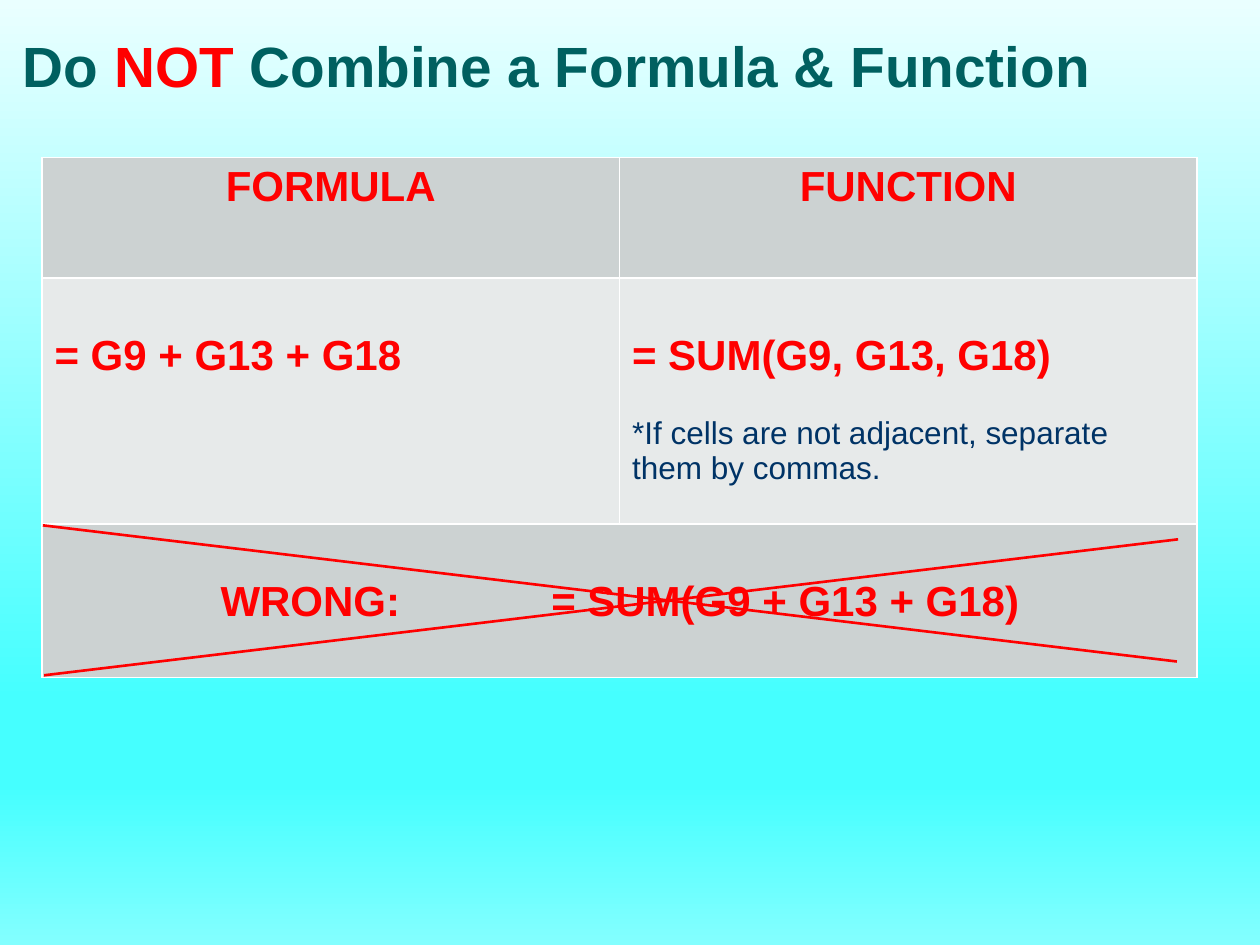
from dataclasses import dataclass

import pptx
import pptx.dml.color
import pptx.enum.shapes
import pptx.enum.text
import pptx.oxml
import pptx.oxml.ns
import pptx.util

COLORS = {
    "title": "006060",
    "accent": "FF0000",
    "note": "003366",
    "band": "CCD2D2",
    "body": "E7EAEA",
    "border": "FFFFFF",
}
BACKGROUND_STOPS = {0: "EAFFFF", 74: "45FFFF", 83: "45FFFF", 100: "83FFFF"}
FONT = "Arial"
NAMESPACE = pptx.oxml.ns.nsdecls("a")
LEFT = pptx.enum.text.PP_ALIGN.LEFT
CENTER = pptx.enum.text.PP_ALIGN.CENTER
TOP_MARGIN = 3.6
LOWERED_MARGIN = 31.2
SIDE_MARGIN = 7.2


@dataclass(frozen=True)
class Line:
    text: str
    size: float = 24
    color: str = "accent"
    bold: bool = True
    space_before: float = 0
    tab: float = 0


@dataclass(frozen=True)
class Entry:
    row: int
    column: int
    fill: str
    lines: tuple[Line, ...]
    align: pptx.enum.text.PP_ALIGN = LEFT
    top: float = LOWERED_MARGIN
    left: float = SIDE_MARGIN


@dataclass(frozen=True)
class Stroke:
    x1: float
    y1: float
    x2: float
    y2: float


ENTRIES = (
    Entry(0, 0, "band", (Line("FORMULA"),), CENTER, TOP_MARGIN),
    Entry(0, 1, "band", (Line("FUNCTION"),), CENTER, TOP_MARGIN),
    Entry(1, 0, "body", (Line("= G9 + G13 + G18"),)),
    Entry(1, 1, "body", (
        Line("= SUM(G9, G13, G18)"),
        Line("*If cells are not adjacent, separate them by commas.",
             18, "note", False, 20.7),
    )),
    Entry(2, 0, "band", (Line("WRONG:\t= SUM(G9 + G13 + G18)", tab=189),), left=102),
)
CROSS = (Stroke(24.5, 300.2, 672.5, 378), Stroke(25.2, 385.9, 673.2, 308.2))


def rgb(name: str) -> pptx.dml.color.RGBColor:
    return pptx.dml.color.RGBColor.from_string(COLORS[name])


def format_font(font, size: float, color: str, bold: bool) -> None:
    font.name = FONT
    font.size = pptx.util.Pt(size)
    font.bold = bold
    font.color.rgb = rgb(color)


def paint_background(slide) -> None:
    stops = "".join(
        f'<a:gs pos="{position * 1000}"><a:srgbClr val="{color}"/></a:gs>'
        for position, color in BACKGROUND_STOPS.items()
    )
    fill = slide.background.fill
    fill.gradient()
    gradient = slide._element.find(".//" + pptx.oxml.ns.qn("a:gradFill"))
    gradient.getparent().replace(gradient, pptx.oxml.parse_xml(
        f'<a:gradFill {NAMESPACE} rotWithShape="1"><a:gsLst>{stops}</a:gsLst>'
        '<a:lin ang="5400000" scaled="0"/></a:gradFill>'
    ))


def write_title(slide) -> None:
    title = slide.shapes.title
    title.left, title.top = pptx.util.Pt(5.8), pptx.util.Pt(2.9)
    title.width, title.height = pptx.util.Pt(696.2), pptx.util.Pt(57.6)
    frame = title.text_frame
    frame.auto_size = pptx.enum.text.MSO_AUTO_SIZE.NONE
    frame.vertical_anchor = pptx.enum.text.MSO_ANCHOR.BOTTOM
    heading = frame.paragraphs[0]
    heading.alignment = LEFT
    heading.line_spacing = 0.9
    for words, color in (("Do ", "title"), ("NOT", "accent"),
                         (" Combine a Formula & Function", "title")):
        run = heading.add_run()
        run.text = words
        format_font(run.font, 32.4, color, True)


def add_borders(cell) -> None:
    properties = cell._tc.get_or_add_tcPr()
    for side in ("lnL", "lnR", "lnT", "lnB"):
        properties.append(pptx.oxml.parse_xml(
            f'<a:{side} {NAMESPACE} w="12700"><a:solidFill>'
            f'<a:srgbClr val="{COLORS["border"]}"/></a:solidFill></a:{side}>'
        ))


def write_line(paragraph, line: Line, align: pptx.enum.text.PP_ALIGN) -> None:
    paragraph.text = line.text
    paragraph.alignment = align
    if line.space_before:
        paragraph.space_before = pptx.util.Pt(line.space_before)
    if line.tab:
        paragraph._p.get_or_add_pPr().append(pptx.oxml.parse_xml(
            f'<a:tabLst {NAMESPACE}>'
            f'<a:tab pos="{pptx.util.Pt(line.tab)}" algn="l"/></a:tabLst>'
        ))
    for run in paragraph.runs:
        format_font(run.font, line.size, line.color, line.bold)


def fill_entry(table, entry: Entry) -> None:
    cell = table.cell(entry.row, entry.column)
    cell.margin_top = pptx.util.Pt(entry.top)
    cell.margin_left = pptx.util.Pt(entry.left)
    cell.fill.solid()
    cell.fill.fore_color.rgb = rgb(entry.fill)
    frame = cell.text_frame
    frame.text = "\n".join(line.text for line in entry.lines)
    for paragraph, line in zip(frame.paragraphs, entry.lines):
        write_line(paragraph, line, entry.align)


def add_comparison(slide) -> None:
    heights = (69, 140.4, 87.8)
    comparison = slide.shapes.add_table(
        len(heights), 2, pptx.util.Pt(24), pptx.util.Pt(90),
        pptx.util.Pt(660), pptx.util.Pt(sum(heights)),
    ).table
    for row, height in zip(comparison.rows, heights):
        row.height = pptx.util.Pt(height)
    for cell in comparison.iter_cells():
        add_borders(cell)
        cell.fill.solid()
        cell.fill.fore_color.rgb = rgb("band")
    comparison.cell(2, 0).merge(comparison.cell(2, 1))
    for entry in ENTRIES:
        fill_entry(comparison, entry)


def add_stroke(slide, stroke: Stroke) -> None:
    connector = slide.shapes.add_connector(
        pptx.enum.shapes.MSO_CONNECTOR.STRAIGHT,
        pptx.util.Pt(stroke.x1), pptx.util.Pt(stroke.y1),
        pptx.util.Pt(stroke.x2), pptx.util.Pt(stroke.y2),
    )
    connector.line.color.rgb = rgb("accent")
    connector.line.width = pptx.util.Pt(1.5)
    connector._element.spPr.append(
        pptx.oxml.parse_xml(f"<a:effectLst {NAMESPACE}/>"))


def main() -> None:
    deck = pptx.Presentation()
    deck.slide_width, deck.slide_height = pptx.util.Pt(720), pptx.util.Pt(540)
    slide = deck.slides.add_slide(deck.slide_layouts[5])
    paint_background(slide)
    write_title(slide)
    add_comparison(slide)
    for stroke in CROSS:
        add_stroke(slide, stroke)
    deck.save("out.pptx")


if __name__ == "__main__":
    main()
